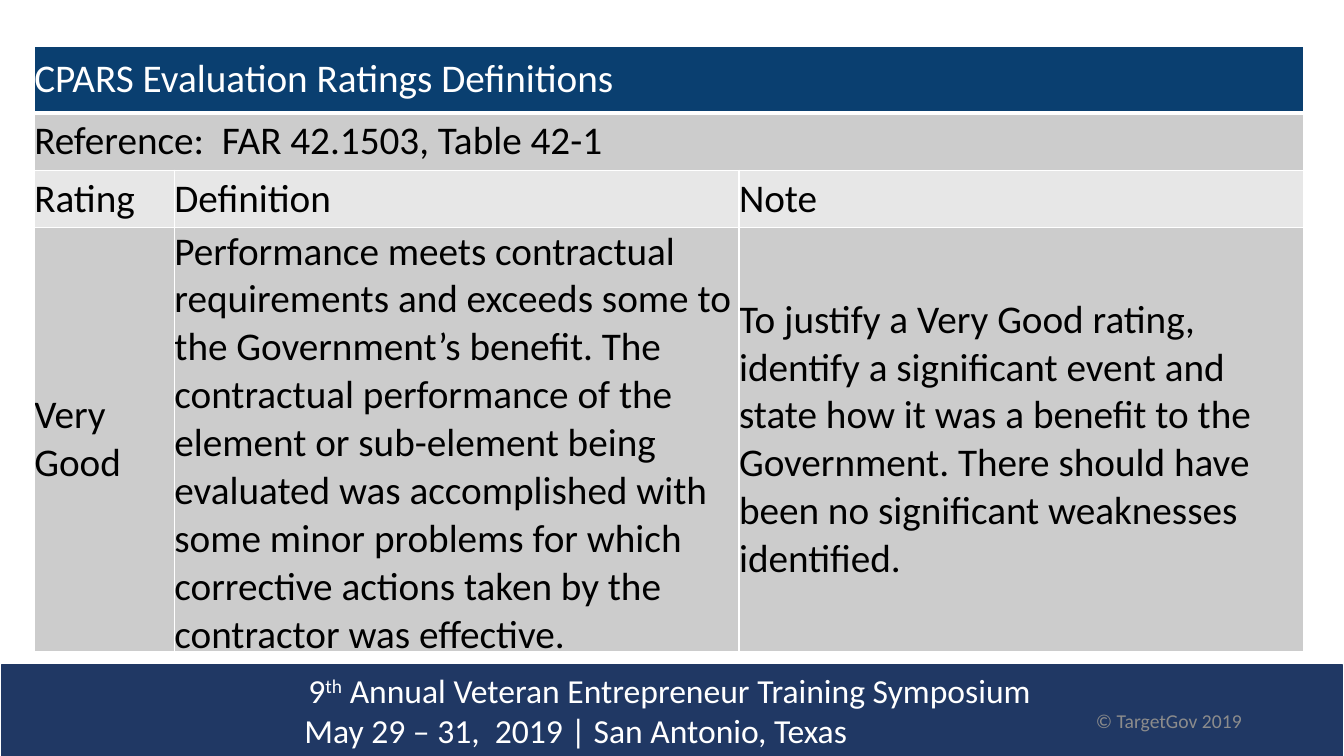
from dataclasses import dataclass

from lxml import etree
from pptx import Presentation
from pptx import util as u
from pptx.dml.color import RGBColor
from pptx.enum import shapes, text
from pptx.oxml import ns


@dataclass(frozen=True)
class Theme:
    font: str = "Calibri"
    white: str = "FFFFFF"
    black: str = "000000"
    muted: str = "8C8C8C"
    banner: str = "203864"
    header: str = "0A3F70"
    dark_band: str = "CCCCCC"
    light_band: str = "E7E7E7"
    table_size: int = 28
    banner_size: int = 24
    credit_size: int = 14


class SlideBuilder:
    def __init__(self, slide, theme):
        self.slide = slide
        self.theme = theme

    def add_run(self, paragraph, wording, size, color, baseline=0):
        run = paragraph.add_run()
        run.text = wording
        run.font.name = self.theme.font
        run.font.size = u.Pt(size)
        run.font.color.rgb = RGBColor.from_string(color)
        if baseline:
            run.font._element.set("baseline", str(baseline * 1000))

    def banner(self, box, lines):
        shape = self.slide.shapes.add_shape(
            shapes.MSO_SHAPE.RECTANGLE, *map(u.Inches, box))
        shape.shadow.inherit = False
        color = RGBColor.from_string(self.theme.banner)
        shape.fill.solid()
        shape.fill.fore_color.rgb = color
        shape.line.color.rgb = color
        shape.line.width = u.Pt(1)
        frame = shape.text_frame
        frame.vertical_anchor = text.MSO_ANCHOR.MIDDLE
        for index, (indent, runs) in enumerate(lines):
            paragraph = frame.add_paragraph() if index else frame.paragraphs[0]
            paragraph.alignment = text.PP_ALIGN.LEFT
            properties = paragraph._p.get_or_add_pPr()
            properties.set("marL", str(u.Inches(indent)))
            properties.set("indent", "0")
            for wording, baseline in runs:
                self.add_run(paragraph, wording, self.theme.banner_size,
                             self.theme.white, baseline)

    def credit(self, box, wording):
        frame = self.slide.shapes.add_textbox(*map(u.Inches, box)).text_frame
        frame.word_wrap = True
        frame.vertical_anchor = text.MSO_ANCHOR.MIDDLE
        self.add_run(frame.paragraphs[0], wording,
                     self.theme.credit_size, self.theme.muted)

    def border(self, cell, bottom):
        properties = cell._tc.get_or_add_tcPr()
        for index, side in enumerate("LRTB"):
            line = etree.Element(ns.qn(f"a:ln{side}"))
            line.set("w", str(u.Pt(bottom if side == "B" else 1)))
            fill = etree.SubElement(line, ns.qn("a:solidFill"))
            etree.SubElement(fill, ns.qn("a:srgbClr")).set("val", self.theme.white)
            properties.insert(index, line)

    def fill_cell(self, cell, wording, fill, color):
        cell.margin_left = cell.margin_right = 0
        cell.margin_top = cell.margin_bottom = 0
        cell.vertical_anchor = text.MSO_ANCHOR.MIDDLE
        cell.fill.solid()
        cell.fill.fore_color.rgb = RGBColor.from_string(fill)
        paragraph = cell.text_frame.paragraphs[0]
        for index, part in enumerate(wording.split("\n")):
            if index:
                paragraph.add_line_break()
            self.add_run(paragraph, part, self.theme.table_size, color)

    def table(self, box, widths, heights, rows):
        table = self.slide.shapes.add_table(
            len(heights), len(widths), *map(u.Inches, box)).table
        for column, width in zip(table.columns, widths):
            column.width = u.Inches(width)
        for row, height in zip(table.rows, heights):
            row.height = u.Inches(height)
        for row_index, (fill, color, wordings) in enumerate(rows):
            if len(wordings) == 1:
                table.cell(row_index, 0).merge(
                    table.cell(row_index, len(widths) - 1))
            for column_index, wording in enumerate(wordings):
                self.fill_cell(table.cell(row_index, column_index),
                               wording, fill, color)
            for cell in table.rows[row_index].cells:
                self.border(cell, bottom=1 if row_index else 3)


def main():
    presentation = Presentation()
    presentation.slide_width = u.Inches(13.33)
    presentation.slide_height = u.Inches(7.5)
    theme = Theme()
    slide = presentation.slides.add_slide(presentation.slide_layouts[6])
    builder = SlideBuilder(slide, theme)

    builder.banner((0.02, 6.59, 13.29, 0.91), [
        (2.94, [("9", 0), ("th", 30),
                (" Annual Veteran Entrepreneur Training Symposium", 0)]),
        (2.9, [("May 29 – 31,  2019 | San Antonio, Texas", 0)]),
    ])
    builder.credit((10.77, 6.99, 2.22, 0.32), "© TargetGov 2019")

    definition = (
        "Performance meets contractual requirements and exceeds some to the "
        "Government’s benefit. The contractual performance of the element or "
        "sub-element being evaluated was accomplished with some minor problems "
        "for which corrective actions taken by the\ncontractor was effective.")
    note = (
        "To justify a Very Good rating, identify a significant event and state "
        "how it was a benefit to the Government. There should have been no "
        "significant weaknesses identified.")
    builder.table(
        (0.34, 0.46, 12.59, 5.8), (1.39, 5.6, 5.6), (0.66, 0.57, 0.57, 4), [
            (theme.header, theme.white, ["CPARS Evaluation Ratings Definitions"]),
            (theme.dark_band, theme.black,
             ["Reference:  FAR 42.1503, Table 42-1"]),
            (theme.light_band, theme.black, ["Rating", "Definition", "Note"]),
            (theme.dark_band, theme.black, ["Very Good", definition, note]),
        ])
    presentation.save("out.pptx")


if __name__ == "__main__":
    main()
